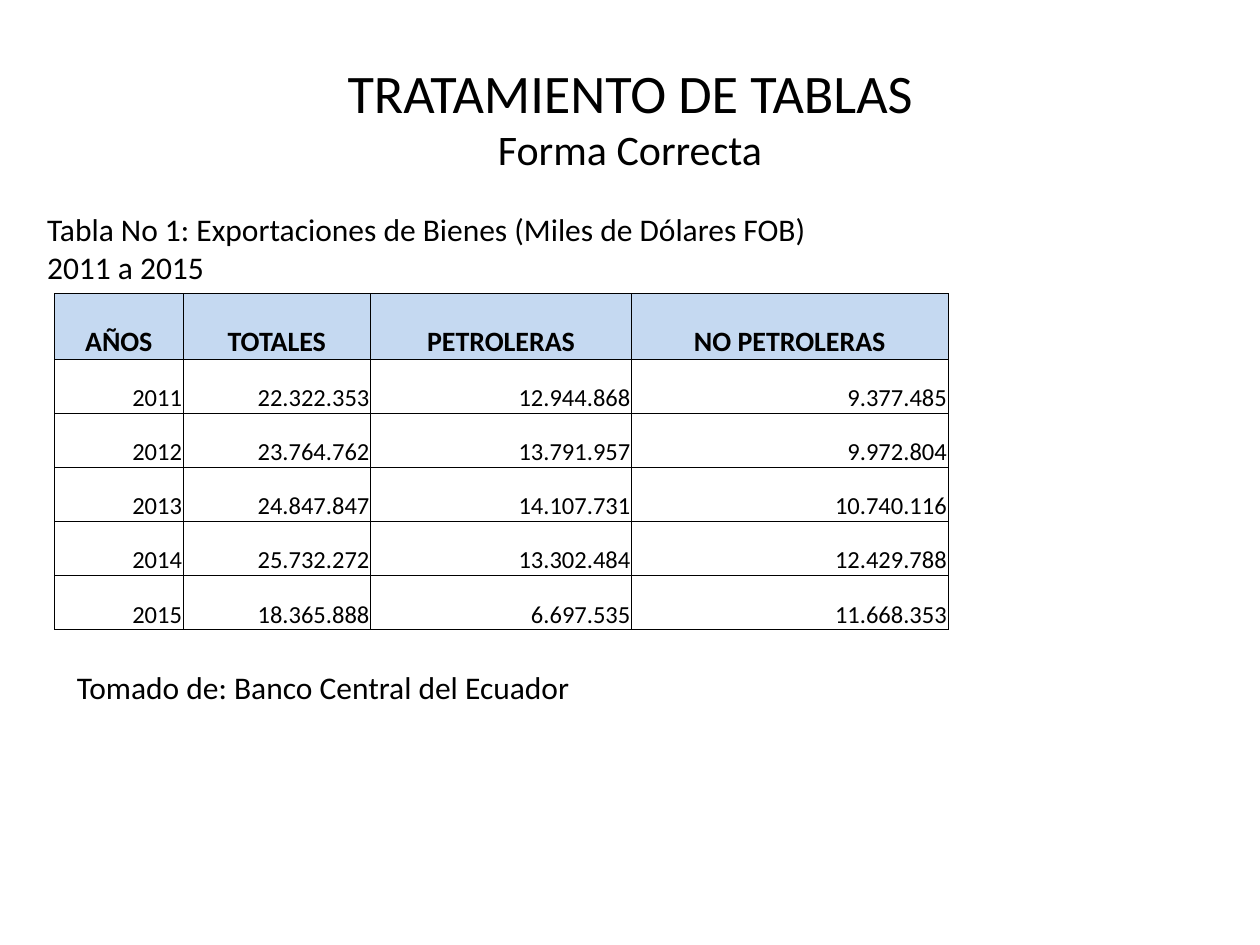
from lxml.etree import SubElement
from pptx import Presentation
from pptx.dml.color import RGBColor
from pptx.enum.text import MSO_ANCHOR, MSO_AUTO_SIZE, PP_ALIGN
from pptx.oxml.ns import qn
from pptx.util import Cm, Pt

FONT = "Calibri"
BLACK = "000000"
HEAD_FILL = "C5D9F1"
COLS = [2.59, 3.78, 5.26, 6.38]
HEAD_ROW, BODY_ROW = 1.32, 1.09
ROWS = [
    ["AÑOS", "TOTALES", "PETROLERAS", "NO PETROLERAS"],
    ["2011", "22.322.353", "12.944.868", "9.377.485"],
    ["2012", "23.764.762", "13.791.957", "9.972.804"],
    ["2013", "24.847.847", "14.107.731", "10.740.116"],
    ["2014", "25.732.272", "13.302.484", "12.429.788"],
    ["2015", "18.365.888", "6.697.535", "11.668.353"],
]


def color(code):
    return RGBColor.from_string(code)


def write(para, text, size=18, bold=False, align=PP_ALIGN.LEFT):
    para.alignment = align
    run = para.add_run()
    run.text = text
    font = run.font
    font.name, font.size, font.bold = FONT, Pt(size), bold
    font.color.rgb = color(BLACK)


def add_title(slide):
    title = slide.shapes.title
    title.left, title.top = Cm(1.27), Cm(0.76)
    title.width, title.height = Cm(22.86), Cm(3.18)
    frame = title.text_frame
    frame.auto_size = MSO_AUTO_SIZE.NONE
    frame.vertical_anchor = MSO_ANCHOR.MIDDLE
    para = frame.paragraphs[0]
    write(para, "TRATAMIENTO DE TABLAS", size=31, align=PP_ALIGN.CENTER)
    para.add_line_break()
    write(para, "Forma Correcta", size=24, align=PP_ALIGN.CENTER)


def add_note(slide, lines, left, top, width, height):
    box = slide.shapes.add_textbox(Cm(left), Cm(top), Cm(width), Cm(height))
    frame = box.text_frame
    frame.word_wrap = True
    frame.auto_size = MSO_AUTO_SIZE.SHAPE_TO_FIT_TEXT
    for i, line in enumerate(lines):
        write(frame.add_paragraph() if i else frame.paragraphs[0], line)


def add_border(cell):
    props = cell._tc.get_or_add_tcPr()
    for side in ("a:lnL", "a:lnR", "a:lnT", "a:lnB"):
        line = SubElement(props, qn(side), w=str(Pt(0.5)))
        fill = SubElement(line, qn("a:solidFill"))
        SubElement(fill, qn("a:srgbClr"), val=BLACK)


def fill_cell(cell, text, head):
    cell.margin_left = cell.margin_right = cell.margin_top = Cm(0.02)
    cell.margin_bottom = 0
    cell.vertical_anchor = MSO_ANCHOR.BOTTOM
    add_border(cell)
    if head:
        cell.fill.solid()
        cell.fill.fore_color.rgb = color(HEAD_FILL)
    else:
        cell.fill.background()
    write(cell.text_frame.paragraphs[0], text, size=16 if head else 14,
          bold=head, align=PP_ALIGN.CENTER if head else PP_ALIGN.RIGHT)


def add_grid(slide, left, top):
    high = [HEAD_ROW] + [BODY_ROW] * (len(ROWS) - 1)
    table = slide.shapes.add_table(
        len(ROWS), len(COLS), Cm(left), Cm(top), Cm(sum(COLS)), Cm(sum(high))
    ).table
    table.horz_banding = False
    for col, width in zip(table.columns, COLS):
        col.width = Cm(width)
    for r, (row, height) in enumerate(zip(table.rows, high)):
        row.height = Cm(height)
        for cell, text in zip(row.cells, ROWS[r]):
            fill_cell(cell, text, head=r == 0)


def main():
    deck = Presentation()
    deck.slide_width, deck.slide_height = Cm(25.4), Cm(19.05)
    slide = deck.slides.add_slide(deck.slide_layouts[5])
    add_title(slide)
    add_note(slide, ["Tabla No 1: Exportaciones de Bienes (Miles de Dólares FOB)",
                     "2011 a 2015"], 0.7, 4.11, 16.2, 1.8)
    add_grid(slide, 1.1, 5.92)
    add_note(slide, ["Tomado de: Banco Central del Ecuador"],
             1.3, 13.34, 17.6, 1.02)
    deck.save("out.pptx")


if __name__ == "__main__":
    main()
